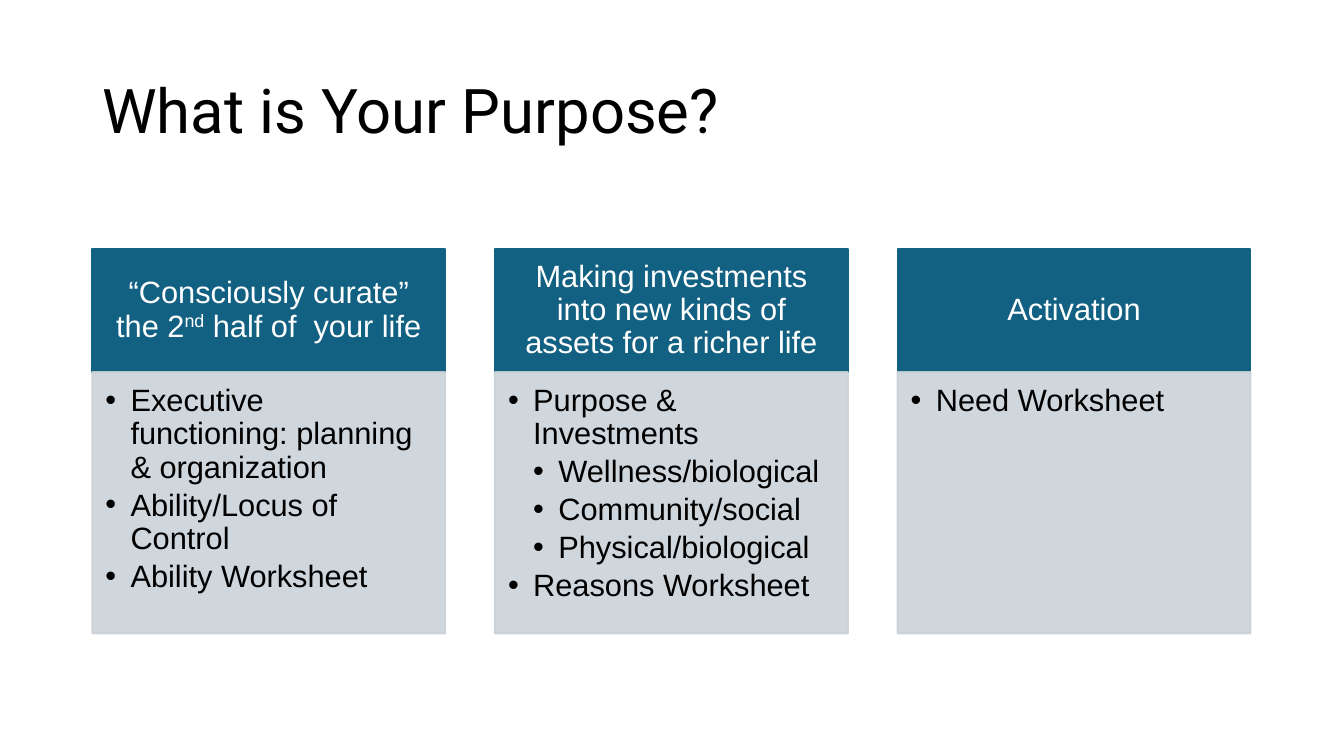
from lxml.etree import SubElement
from pptx import Presentation
from pptx.dml.color import RGBColor
from pptx.enum.shapes import MSO_SHAPE as Preset
from pptx.enum.text import MSO_ANCHOR as Anchor, PP_ALIGN as Align
from pptx.oxml.ns import qn
from pptx.util import Pt

BLACK, WHITE, TEAL, GREY = "000000", "FFFFFF", "126082", "CAD1D8"
COLUMN_LEFT, COLUMN_PITCH, COLUMN_WIDTH = 66, 287.6, 252
HEADER_TOP, HEADER_HEIGHT, BODY_HEIGHT = 177.8, 88, 186.6
INDENT = 18

COLUMNS = [
    (
        [("“Consciously curate” the 2", False), ("nd", True), (" half of  your life", False)],
        [
            (1, "Executive functioning: planning & organization"),
            (1, "Ability/Locus of Control"),
            (1, "Ability Worksheet"),
        ],
    ),
    (
        [("Making investments into new kinds of assets for a richer life", False)],
        [
            (1, "Purpose & Investments"),
            (2, "Wellness/biological"),
            (2, "Community/social"),
            (2, "Physical/biological"),
            (1, "Reasons Worksheet"),
        ],
    ),
    ([("Activation", False)], [(1, "Need Worksheet")]),
]


def rgb(value):
    """Turn a hex string into a colour."""
    return RGBColor.from_string(value)


def set_frame(frame, anchor, insets):
    """Set wrapping, anchor and the left, top, right and bottom insets."""
    frame.word_wrap = True
    frame.vertical_anchor = anchor
    left, top, right, bottom = insets
    frame.margin_left, frame.margin_top = Pt(left), Pt(top)
    frame.margin_right, frame.margin_bottom = Pt(right), Pt(bottom)


def add_span(para, text, size, font, color, raised=False):
    """Add one run, raised if it is a superscript."""
    span = para.add_run()
    span.text = text
    span.font.size = Pt(size)
    span.font.name = font
    span.font.color.rgb = rgb(color)
    if raised:
        span._r.get_or_add_rPr().set("baseline", "30000")


def add_box(page, left, top, height, color, opacity=100):
    """Add a column-wide rectangle whose fill and line share a colour."""
    box = page.shapes.add_shape(
        Preset.RECTANGLE, Pt(left), Pt(top), Pt(COLUMN_WIDTH), Pt(height)
    )
    box.shadow.inherit = False
    box.fill.solid()
    box.fill.fore_color.rgb = rgb(color)
    box.line.color.rgb = rgb(color)
    box.line.width = Pt(1.5)
    if opacity < 100:
        for paint in box._element.spPr.iter(qn("a:srgbClr")):
            SubElement(paint, qn("a:alpha")).set("val", str(opacity * 1000))
    return box


def add_bullet(para, level):
    """Give a paragraph a black bullet with a hanging indent."""
    para.level = level
    props = para._p.get_or_add_pPr()
    props.set("marL", str(Pt(INDENT * level)))
    props.set("indent", str(-Pt(INDENT)))
    SubElement(SubElement(props, qn("a:buClr")), qn("a:srgbClr")).set("val", BLACK)
    SubElement(props, qn("a:buFont")).set("typeface", "Arial")
    SubElement(props, qn("a:buChar")).set("char", "•")


def add_title(page, text):
    """Add the slide title."""
    box = page.shapes.add_textbox(Pt(66), Pt(28.8), Pt(828), Pt(104.4))
    set_frame(box.text_frame, Anchor.MIDDLE, (7.2, 3.6, 7.2, 3.6))
    para = box.text_frame.paragraphs[0]
    para.line_spacing = 0.9
    add_span(para, text, 44, "Roboto", BLACK)


def add_header(page, left, spans):
    """Add the coloured heading of a column."""
    frame = add_box(page, left, HEADER_TOP, HEADER_HEIGHT, TEAL).text_frame
    set_frame(frame, Anchor.MIDDLE, (12.3, 7.1, 12.3, 7.1))
    para = frame.paragraphs[0]
    para.alignment = Align.CENTER
    para.line_spacing = 0.9
    for text, raised in spans:
        add_span(para, text, 22, "Arial", WHITE, raised)


def add_body(page, left, items):
    """Add the bulleted panel of a column."""
    top = HEADER_TOP + HEADER_HEIGHT
    frame = add_box(page, left, top, BODY_HEIGHT, GREY, 89).text_frame
    set_frame(frame, Anchor.TOP, (9.3, 9.3, 12.3, 13.9))
    for index, (level, text) in enumerate(items):
        para = frame.add_paragraph() if index else frame.paragraphs[0]
        para.alignment = Align.LEFT
        para.line_spacing = 0.9
        para.space_before = Pt(3.3 if index else 0)
        add_bullet(para, level)
        add_span(para, text, 22, "Arial", BLACK)


def main():
    """Build the slide and save it."""
    deck = Presentation()
    deck.slide_width, deck.slide_height = Pt(960), Pt(540)
    page = deck.slides.add_slide(deck.slide_layouts[6])
    add_title(page, "What is Your Purpose?")
    for index, (spans, items) in enumerate(COLUMNS):
        left = COLUMN_LEFT + index * COLUMN_PITCH
        add_header(page, left, spans)
        add_body(page, left, items)
    deck.save("out.pptx")


if __name__ == "__main__":
    main()
